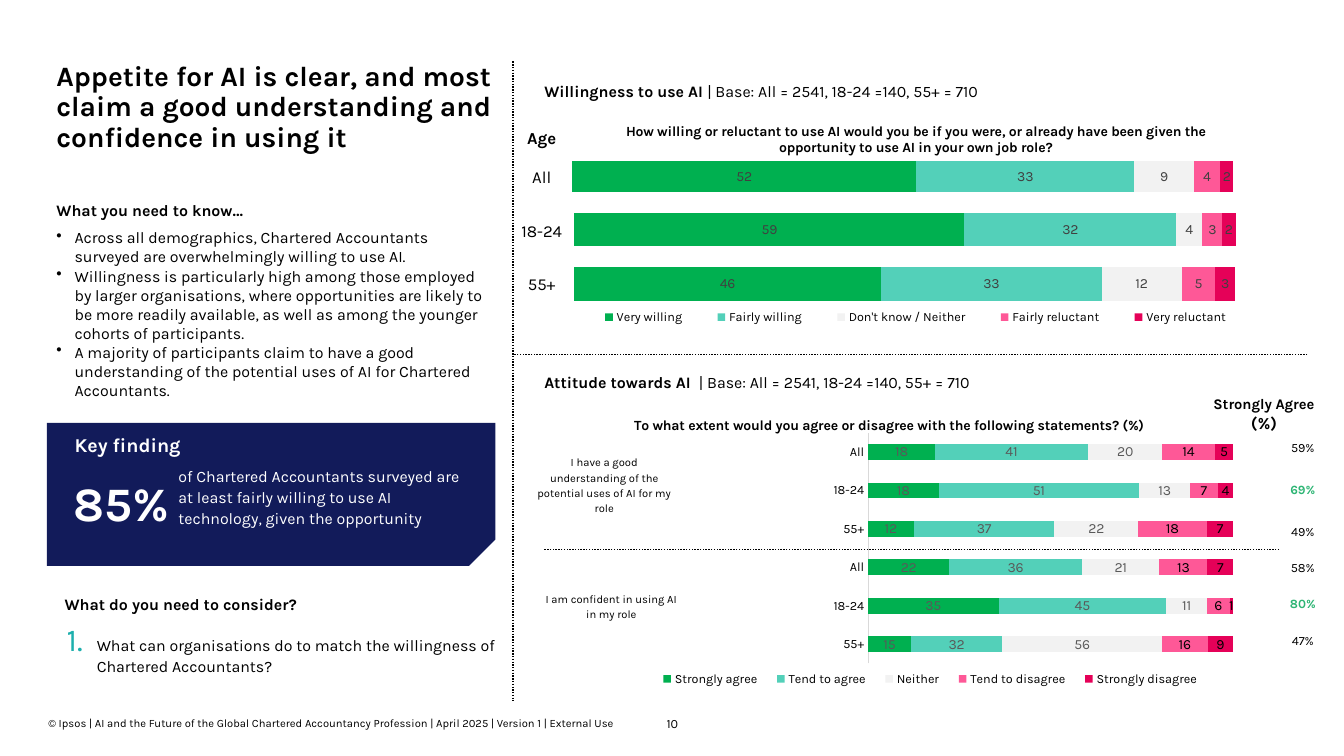
from dataclasses import dataclass
from typing import NamedTuple

from lxml import etree
from pptx import Presentation
from pptx import util as u
from pptx.chart.data import CategoryChartData
from pptx.dml.color import RGBColor
from pptx.enum import chart as ch, dml, shapes, text as tx
from pptx.oxml import ns

COLS, ROWS = 160, 90
CELL = u.Inches(1 / 12)
FONT = "Karla"
BLACK, WHITE, NAVY, TEAL = "000000", "FFFFFF", "121B5A", "1DAFAD"
GREEN, GREY = "2DB574", "404040"
HUES = ["00B050", "53D0B9", "F2F2F2", "FE5897", "E50158"]
AGES = ["All", "18-24", "55+"]
BASE = "| Base: All = 2541, 18-24 =140, 55+ = 710"
MID, TOP, END = tx.MSO_ANCHOR.MIDDLE, tx.MSO_ANCHOR.TOP, tx.MSO_ANCHOR.BOTTOM


class Box(NamedTuple):
    """Left, top, width and height in grid cells."""
    x: float
    y: float
    w: float
    h: float


class Run(NamedTuple):
    text: str
    size: float
    bold: bool = False


class Area(NamedTuple):
    """Place inside a chart, in shares of its size."""
    x: float
    y: float
    w: float
    h: float


@dataclass
class Graph:
    box: Box
    cats: list[str]
    names: list[str]
    rows: list[list[int]]
    plot: Area
    gap: int
    inks: list[str]
    title: str = ""
    key: Area | None = None
    axis: bool = False


def cells(*nums: float) -> list[int]:
    return [round(n * CELL) for n in nums]


def tint(code: str) -> RGBColor:
    return RGBColor.from_string(code)


def style(font, size: float, bold: bool = False, hue: str = BLACK) -> None:
    font.name, font.size, font.bold = FONT, u.Pt(size), bold
    font.color.rgb = tint(hue)


def mark(par, bullet: str, indent: float) -> None:
    """Give a paragraph a bullet sign, or a large number for '1.'."""
    props = par._p.get_or_add_pPr()
    step = u.Inches(indent)
    props.set("marL", str(step))
    props.set("indent", str(-step))
    if bullet == "1.":
        hue = etree.SubElement(props, ns.qn("a:buClr"))
        etree.SubElement(hue, ns.qn("a:srgbClr")).set("val", TEAL)
        etree.SubElement(props, ns.qn("a:buSzPct")).set("val", "200000")
        etree.SubElement(props, ns.qn("a:buAutoNum")).set("type", "arabicPeriod")
    else:
        etree.SubElement(props, ns.qn("a:buChar")).set("char", bullet)


def write(slide, box: Box, *paras: str | list[Run], size: float = 11.4,
          bold: bool = False, hue: str = BLACK, lead: float = 1.0, mid: bool = False,
          anchor=TOP, inset: float = 0, bullet: str = "", indent: float = 0) -> None:
    frame = slide.shapes.add_textbox(*cells(*box)).text_frame
    frame.word_wrap, frame.vertical_anchor = True, anchor
    frame.margin_left = frame.margin_right = u.Inches(inset)
    frame.margin_top = frame.margin_bottom = u.Inches(inset / 2)
    for i, para in enumerate(paras):
        par = frame.add_paragraph() if i else frame.paragraphs[0]
        if bullet:
            mark(par, bullet, indent)
        par.line_spacing = lead
        par.alignment = tx.PP_ALIGN.CENTER if mid else tx.PP_ALIGN.LEFT
        for part in [Run(para, size, bold)] if isinstance(para, str) else para:
            run = par.add_run()
            run.text = part.text
            style(run.font, part.size, part.bold, hue)


def rule(slide, x1: float, y1: float, x2: float, y2: float) -> None:
    line = slide.shapes.add_connector(shapes.MSO_CONNECTOR.STRAIGHT, *cells(x1, y1, x2, y2))
    line.line.color.rgb, line.line.width = tint(BLACK), u.Pt(1)
    line.line.dash_style = dml.MSO_LINE.ROUND_DOT
    etree.SubElement(line._element.spPr, ns.qn("a:effectLst"))


def place(node, at: int, area: Area, inner: bool = False) -> None:
    """Fix a plot or legend at an area of its chart."""
    for old in node.findall(ns.qn("c:layout")):
        node.remove(old)
    layout = etree.Element(ns.qn("c:layout"))
    node.insert(at, layout)
    manual = etree.SubElement(layout, ns.qn("c:manualLayout"))
    pairs = [("layoutTarget", "inner")] if inner else []
    pairs += [("xMode", "edge"), ("yMode", "edge"), *zip("xywh", area)]
    for tag, val in pairs:
        etree.SubElement(manual, ns.qn(f"c:{tag}")).set("val", str(val))


def graph(slide, item: Graph) -> None:
    data = CategoryChartData()
    data.categories = item.cats
    for name, vals in zip(item.names, item.rows):
        data.add_series(name, vals)
    chart = slide.shapes.add_chart(ch.XL_CHART_TYPE.BAR_STACKED_100, *cells(*item.box), data).chart
    style(chart.font, 10)
    chart.has_title = bool(item.title)
    if item.title:
        frame = chart.chart_title.text_frame
        frame.text = item.title
        style(frame.paragraphs[0].runs[0].font, 10, True)
    chart.has_legend = item.key is not None
    if item.key:
        chart.legend.position = ch.XL_LEGEND_POSITION.BOTTOM
        chart.legend.include_in_layout = False
        style(chart.legend.font, 9)
        place(chart.legend._element, 1, item.key)
    chart.value_axis.has_major_gridlines = False
    chart.value_axis.visible = False
    axis = chart.category_axis
    axis.visible = item.axis
    if item.axis:
        axis.reverse_order = True
        axis.major_tick_mark = ch.XL_TICK_MARK.NONE
        axis.format.line.color.rgb, axis.format.line.width = tint("D9D9D9"), u.Pt(0.75)
        style(axis.tick_labels.font, 9)
    plot = chart.plots[0]
    plot.gap_width, plot.overlap, plot.vary_by_categories = item.gap, 100, False
    for series, hue, ink in zip(plot.series, HUES, item.inks):
        series.format.fill.solid()
        series.format.fill.fore_color.rgb = tint(hue)
        series.data_labels.show_value = True
        style(series.data_labels.font, 10, hue=ink)
    place(chart._chartSpace.chart.plotArea, 0, item.plot, inner=True)


def table(slide, box: Box, rows: list[tuple[str, float]]) -> None:
    grid = slide.shapes.add_table(len(rows), 1, *cells(*box)).table
    grid.first_row = grid.horz_banding = False
    for i, (share, height) in enumerate(rows):
        grid.rows[i].height = cells(height)[0]
        cell = grid.cell(i, 0)
        cell.fill.background()
        cell.vertical_anchor = MID
        par = cell.text_frame.paragraphs[0]
        par.alignment = tx.PP_ALIGN.CENTER
        run = par.add_run()
        run.text = share
        young = i % 3 == 1
        style(run.font, 9, young, GREEN if young else BLACK)


def left(slide) -> None:
    write(slide, Box(6.72, 7.44, 51.96, 11.28),
          "Appetite for AI is clear, and most claim a good understanding and confidence in using it",
          size=20, bold=True, lead=0.9)
    write(slide, Box(6.72, 23.64, 39.48, 2.4), "What you need to know…", bold=True, lead=1.1)
    write(slide, Box(6.72, 27.12, 51.48, 27.72),
          "Across all demographics, Chartered Accountants surveyed are overwhelmingly willing to use AI.",
          "Willingness is particularly high among those employed by larger organisations, where "
          "opportunities are likely to be more readily available, as well as among the younger "
          "cohorts of participants.",
          "A majority of participants claim to have a good understanding of the potential uses of "
          "AI for Chartered Accountants.", bullet="•", indent=0.18)
    panel = slide.shapes.add_shape(shapes.MSO_SHAPE.SNIP_1_RECTANGLE, *cells(23.76, 32.16, 17.04, 53.4))
    panel.rotation, panel.adjustments[0] = 90, 0.185
    panel.shadow.inherit = False
    panel.fill.solid()
    panel.fill.fore_color.rgb = tint(NAVY)
    panel.line.fill.background()
    write(slide, Box(8.88, 51.24, 39.48, 2.76), "Key finding", size=14, bold=True, hue=WHITE, lead=1.1)
    write(slide, Box(7.56, 55.08, 19.8, 7.56), "85%", size=34.3, bold=True, hue=WHITE, lead=1.1, inset=0.1)
    write(slide, Box(21.24, 55.32, 34.92, 7.32),
          "of Chartered Accountants surveyed are at least fairly willing to use AI technology, "
          "given the opportunity", hue=WHITE, lead=1.1)
    write(slide, Box(7.68, 70.56, 39.48, 2.4), "What do you need to consider?", bold=True, lead=1.1)
    write(slide, Box(7.92, 75.48, 51.48, 8.76),
          "What can organisations do to match the willingness of Chartered Accountants?",
          lead=1.1, bullet="1.", indent=0.3)


def right(slide) -> None:
    blank = [f"Series {n}" for n in range(1, 6)]
    moods = ["Very willing", "Fairly willing", "Don't know / Neither", "Fairly reluctant", "Very reluctant"]
    views = ["Strongly agree", "Tend to agree", "Neither", "Tend to disagree", "Strongly disagree"]
    high, low = Area(0.05, 0.21, 0.89, 0.47), Area(0.04, 0.53, 0.89, 0.47)
    for box, vals, names, plot, title, key in [
            (Box(63.96, 15.24, 88.44, 27.12), [59, 32, 4, 3, 2], blank, high, "", None),
            (Box(63.72, 9.84, 88.44, 25.08), [52, 33, 9, 4, 2], blank, high, "", None),
            (Box(64.8, 13.08, 88.44, 27.12), [46, 33, 12, 5, 3], moods, low,
             "How willing or reluctant to use AI would you be if you were, or already have been "
             "given the opportunity to use AI in your own job role?", Area(0.04, 0.86, 0.92, 0.1))]:
        graph(slide, Graph(box, ["1"], names, [[v] for v in vals], plot, 219, [GREY] * 5, title, key))
    graph(slide, Graph(
        Box(64.8, 47.88, 82.08, 36.6), AGES * 2, views,
        [[18, 18, 12, 22, 35, 15], [41, 51, 37, 36, 45, 32], [20, 13, 22, 21, 11, 56],
         [14, 7, 18, 13, 6, 16], [5, 4, 7, 7, 1, 9]],
        Area(0.47, 0.1, 0.53, 0.75), 144, ["595959"] * 3 + [BLACK] * 2,
        "To what extent would you agree or disagree with the following statements? (%)",
        Area(0.15, 0.86, 0.82, 0.08), True))
    for y, head in [(9.48, "Willingness to use AI "), (44.16, "Attitude towards AI  ")]:
        write(slide, Box(64.8, y, 82.08, 2.28), [Run(head, 11.4, True), Run(BASE, 11.4)], lead=1.1)
    for y, age in zip([14.04, 18.72, 25.2, 31.44], ["Age", *AGES]):
        write(slide, Box(60.72, y, 7.56, 4.32), age, size=12, bold=age == "Age", lead=1.15, mid=True, anchor=MID)
    for x, y, claim in [(62.4, 55.68, "I have a good understanding of the potential uses of AI for my role"),
                        (63.24, 70.08, "I am confident in using AI in my role")]:
        write(slide, Box(x, y, 19.08, 3.96), claim, size=8, lead=1.15, mid=True, anchor=MID, inset=0.1)
    table(slide, Box(152.04, 51.24, 6.12, 27.24),
          [("59%", 4.32), ("69%", 5.64), *((s, 4.32) for s in ["49%", "58%", "80%", "47%"])])
    write(slide, Box(141.12, 46.44, 18.72, 5.76), [Run("Strongly Agree", 10.5, True)],
          [Run("(%)", 12, True)], mid=True, inset=0.1)


def main() -> None:
    deck = Presentation()
    deck.slide_width, deck.slide_height = cells(COLS, ROWS)
    slide = deck.slides.add_slide(deck.slide_layouts[6])
    right(slide)
    left(slide)
    for ends in [(61.08, 7.32, 61.08, 83.4), (155.64, 42.24, 61.2, 42.24), (152.28, 65.4, 64.8, 65.4)]:
        rule(slide, *ends)
    write(slide, Box(5.76, 85.32, 71.04, 1.56),
          "© Ipsos | AI and the Future of the Global Chartered Accountancy Profession | April 2025 "
          "| Version 1 | External Use", size=8, anchor=END)
    write(slide, Box(76.8, 85.08, 6.48, 1.8), "10", size=9, lead=1.1, mid=True)
    deck.save("out.pptx")


if __name__ == "__main__":
    main()
